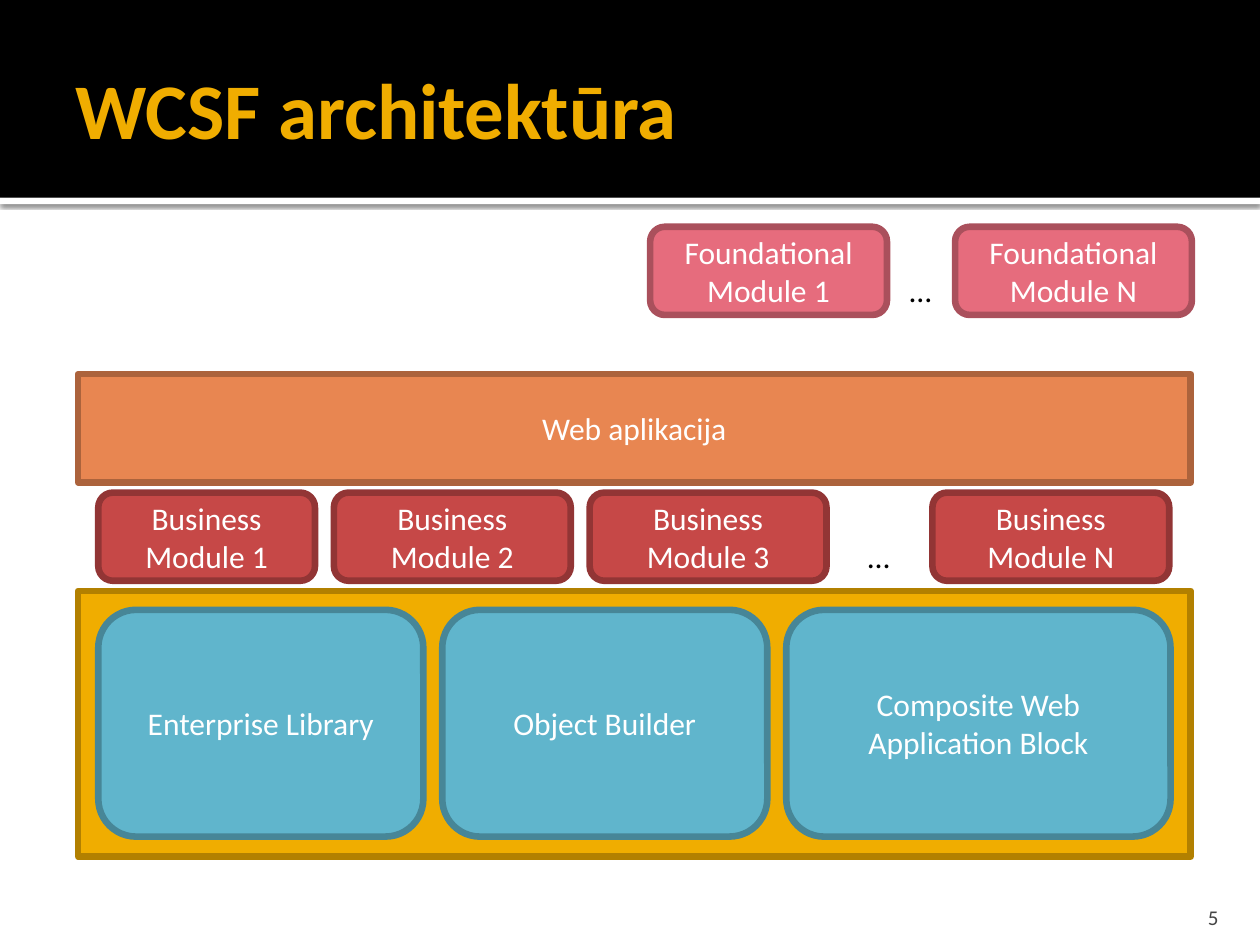
from dataclasses import dataclass

from lxml.etree import SubElement
from pptx import Presentation
from pptx.dml.color import RGBColor
from pptx.enum.shapes import MSO_SHAPE as Shape
from pptx.enum.text import MSO_ANCHOR as Anchor, PP_ALIGN as Align
from pptx.oxml.ns import qn
from pptx.util import Inches, Pt


@dataclass(frozen=True)
class Theme:
    font: str = "Calibri"
    title_size: int = 45
    body_size: int = 18
    number_size: int = 12
    line_width: float = 3.78
    black: str = "000000"
    white: str = "FFFFFF"
    gray: str = "454545"
    gold: tuple = ("F0AD00", "B28000")
    blue: tuple = ("60B5CC", "478697")
    pink: tuple = ("E66C7D", "AA505C")
    red: tuple = ("C64847", "923535")
    orange: tuple = ("E88651", "AC633C")


THEME = Theme()
TITLE = "WCSF architektūra"
PAGE_NUMBER = "5"
LAYERS = [
    ("", 4.69, 2.11, THEME.gold),
    ("Web aplikacija", 2.97, 0.86, THEME.orange),
]
LAYER_LEFT, LAYER_WIDTH = 0.62, 8.83
GAP = 0.15
ELLIPSIS_WIDTH, ELLIPSIS_HEIGHT = 0.38, 0.4
MODULE_ROWS = [
    (0.78, 4.84, 1.8, GAP, THEME.blue, [
        ("Enterprise Library", 2.58),
        ("Object Builder", 2.58),
        ("Composite Web Application Block", 3.05),
    ]),
    (5.16, 1.8, 0.7, GAP, THEME.pink, [
        ("Foundational Module 1", 1.88),
        ("…", 0.24),
        ("Foundational Module N", 1.88),
    ]),
    (0.78, 3.91, 0.7, GAP, THEME.red, [
        ("Business Module 1", 1.72),
        ("Business Module 2", 1.88),
        ("Business Module 3", 1.88),
        ("…", 0.54),
        ("Business Module N", 1.88),
    ]),
]


def write(shape, text, size, color, align=Align.LEFT, anchor=Anchor.TOP, bold=False, wrap=True):
    frame = shape.text_frame
    frame.text = text
    frame.word_wrap = wrap
    frame.vertical_anchor = anchor
    paragraph = frame.paragraphs[0]
    paragraph.alignment = align
    font = paragraph.runs[0].font
    font.name, font.size, font.bold = THEME.font, Pt(size), bold
    font.color.rgb = RGBColor.from_string(color)


def add_text(slide, box, text, size, color, **options):
    shape = slide.shapes.add_textbox(*map(Inches, box))
    write(shape, text, size, color, **options)
    return shape.text_frame


def add_block(slide, box, fill, line=None, text="", kind=Shape.RECTANGLE):
    shape = slide.shapes.add_shape(kind, *map(Inches, box))
    shape.shadow.inherit = False
    shape.fill.solid()
    shape.fill.fore_color.rgb = RGBColor.from_string(fill)
    if line:
        shape.line.color.rgb = RGBColor.from_string(line)
        shape.line.width = Pt(THEME.line_width)
    else:
        shape.line.fill.background()
    if text:
        write(shape, text, THEME.body_size, THEME.white, Align.CENTER, Anchor.MIDDLE)
    return shape


def add_shadow(shape):
    effects = shape._element.spPr.find(qn("a:effectLst"))
    shadow = SubElement(effects, qn("a:outerShdw"), blurRad=str(Pt(2.5)), dist=str(Pt(0.8)),
                        dir="5400000", algn="tl", rotWithShape="0")
    color = SubElement(shadow, qn("a:srgbClr"), val=THEME.black)
    SubElement(color, qn("a:alpha"), val="60000")


def add_header(slide):
    add_shadow(add_block(slide, (0, 1.57, 10, 0.05), THEME.white))
    add_block(slide, (0, 0, 10, 1.57), THEME.black)
    title = add_text(slide, (0.5, 0.17, 9, 1.37), TITLE, THEME.title_size, THEME.gold[0],
                     anchor=Anchor.MIDDLE, bold=True)
    title.margin_right = Inches(0.05)
    number = add_text(slide, (8.97, 7.08, 0.8, 0.3), PAGE_NUMBER, THEME.number_size, THEME.gray,
                      align=Align.RIGHT, anchor=Anchor.BOTTOM)
    number.margin_bottom = 0


def add_module_row(slide, left, top, height, gap, colors, modules):
    for text, width in modules:
        if text == "…":
            box = (left + (width - ELLIPSIS_WIDTH) / 2, top + height - ELLIPSIS_HEIGHT,
                   ELLIPSIS_WIDTH, ELLIPSIS_HEIGHT)
            add_text(slide, box, text, THEME.body_size, THEME.black, wrap=False)
        else:
            add_block(slide, (left, top, width, height), *colors, text, Shape.ROUNDED_RECTANGLE)
        left += width + gap


def main():
    """Build the layered architecture slide."""
    presentation = Presentation()
    presentation.slide_width, presentation.slide_height = Inches(10), Inches(7.5)
    slide = presentation.slides.add_slide(presentation.slide_layouts[6])
    add_header(slide)
    for text, top, height, colors in LAYERS:
        add_block(slide, (LAYER_LEFT, top, LAYER_WIDTH, height), *colors, text)
    for row in MODULE_ROWS:
        add_module_row(slide, *row)
    presentation.save("out.pptx")


if __name__ == "__main__":
    main()
